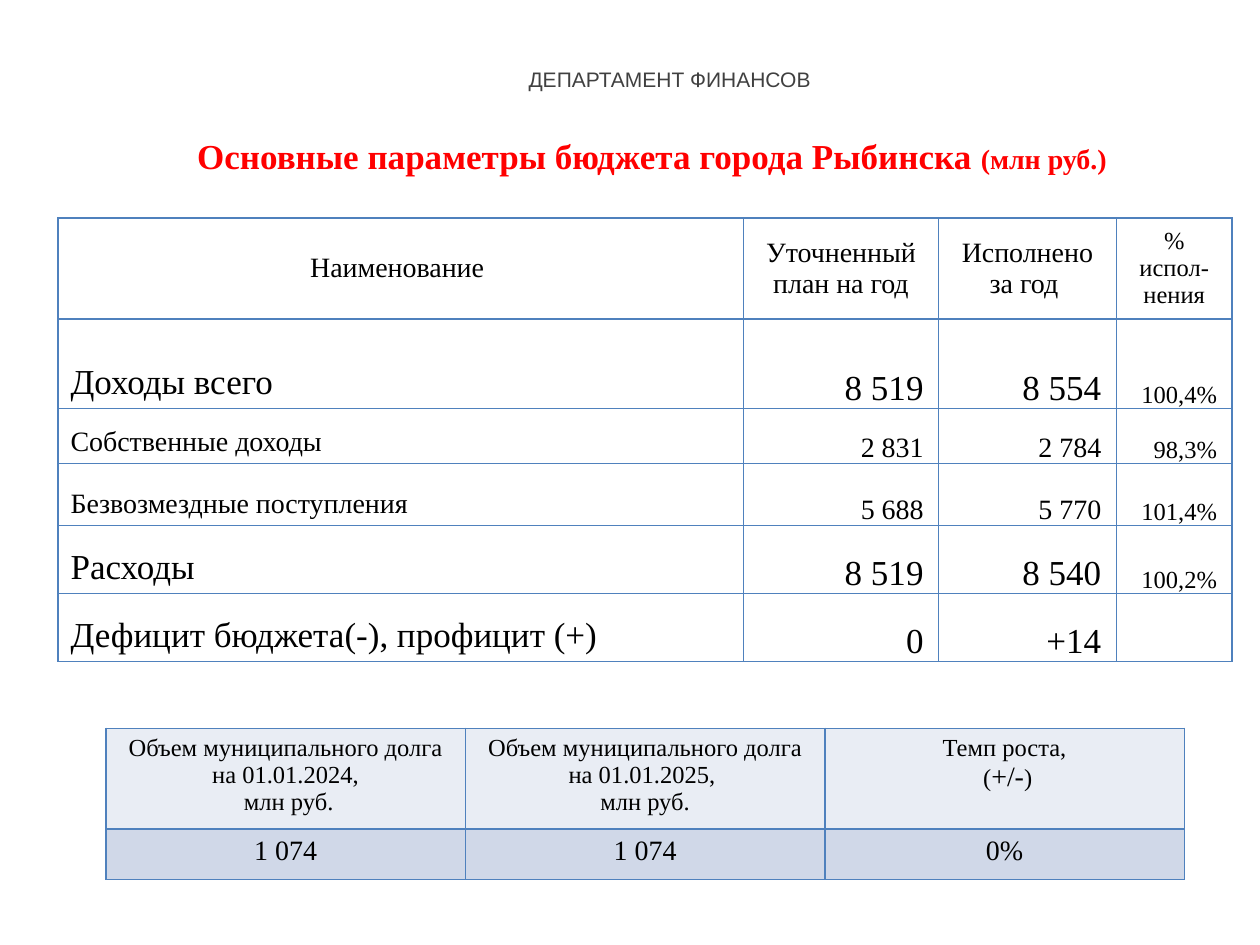
import pptx
import pptx.dml.color
import pptx.enum.text
import pptx.oxml
import pptx.oxml.ns
import pptx.util

Inches = pptx.util.Inches
Align = pptx.enum.text.PP_ALIGN
Anchor = pptx.enum.text.MSO_ANCHOR

SERIF = "Times New Roman"
BORDER_COLOR = "4F81BD"
NUMBER_MARGINS = {
    "margin_left": Inches(0.01),
    "margin_top": Inches(0.01),
    "margin_right": Inches(0.12),
    "margin_bottom": Inches(0),
}

BUDGET_HEADER = [
    ("Наименование ", 16),
    ("Уточненный план на год", 16),
    ("Исполнено\nза год ", 16),
    ("% испол- нения", 14),
]
# Name, plan, actual, percentage, text size, row height
BUDGET_ROWS = [
    ("Доходы всего", "8 519", "8 554", "100,4%", 20, 0.71),
    ("Собственные доходы", "2 831", "2 784", "98,3%", 16, 0.44),
    ("Безвозмездные поступления", "5 688", "5 770", "101,4%", 16, 0.49),
    ("Расходы", "8 519", "8 540", "100,2%", 20, 0.54),
    ("Дефицит бюджета(-), профицит (+)", "0", "+14", "", 20, 0.54),
]
DEBT_HEADER = [
    [[("Объем муниципального долга на 01.01.2024,", 14)], [(" млн руб.", 14)]],
    [[("Объем муниципального долга на 01.01.2025, ", 14)], [("млн руб.", 14)]],
    [[("Темп роста,", 14)], [(" (", 14), ("+/-", 16), (")", 14)]],
]
DEBT_VALUES = ["1 074", "1 074", "0%"]


def rgb(color):
    return pptx.dml.color.RGBColor.from_string(color)


def write_paragraphs(frame, paragraphs, alignment, name=SERIF, color="000000", bold=False):
    """Fill a text frame; each paragraph is a list of (text, size) runs."""
    for index, runs in enumerate(paragraphs):
        paragraph = frame.add_paragraph() if index else frame.paragraphs[0]
        paragraph.alignment = alignment
        for text, size in runs:
            run = paragraph.add_run()
            run.text = text
            font_format = {"name": name, "size": pptx.util.Pt(size), "bold": bold}
            for attribute, value in font_format.items():
                setattr(run.font, attribute, value)
            run.font.color.rgb = rgb(color)


def add_text(slide, box, runs, **font_format):
    frame = slide.shapes.add_textbox(*map(Inches, box)).text_frame
    frame.word_wrap = True
    frame.vertical_anchor = Anchor.MIDDLE
    write_paragraphs(frame, [runs], Align.CENTER, **font_format)


def add_borders(cell):
    properties = cell._tc.get_or_add_tcPr()
    for side in ("lnL", "lnR", "lnT", "lnB"):
        properties.append(pptx.oxml.parse_xml(
            f'<a:{side} {pptx.oxml.ns.nsdecls("a")} w="12700"><a:solidFill>'
            f'<a:srgbClr val="{BORDER_COLOR}"/></a:solidFill></a:{side}>'))


def fill_cell(cell, paragraphs, alignment, anchor, fill=None, margins=None):
    for attribute, value in (margins or {}).items():
        setattr(cell, attribute, value)
    cell.vertical_anchor = anchor
    add_borders(cell)
    if fill:
        cell.fill.solid()
        cell.fill.fore_color.rgb = rgb(fill)
    else:
        cell.fill.background()
    write_paragraphs(cell.text_frame, paragraphs, alignment)


def add_grid(slide, left, top, widths, heights):
    """Add an empty table with the given column widths and row heights."""
    table = slide.shapes.add_table(
        len(heights), len(widths), Inches(left), Inches(top),
        Inches(sum(widths)), Inches(sum(heights))).table
    for column, width in zip(table.columns, widths):
        column.width = Inches(width)
    for row, height in zip(table.rows, heights):
        row.height = Inches(height)
    return table


def add_budget_table(slide, left, top, widths):
    heights = [0.74] + [row[-1] for row in BUDGET_ROWS]
    table = add_grid(slide, left, top, widths, heights)
    for column, (text, size) in enumerate(BUDGET_HEADER):
        paragraphs = [[(line, size)] for line in text.split("\n")]
        fill_cell(table.cell(0, column), paragraphs, Align.CENTER, Anchor.MIDDLE)
    for row, (name, plan, actual, percentage, size, _) in enumerate(BUDGET_ROWS, 1):
        fill_cell(table.cell(row, 0), [[(name, size)]], Align.LEFT, Anchor.BOTTOM)
        numbers = [(plan, size), (actual, size), (percentage, 14)]
        for column, number in enumerate(numbers, 1):
            paragraphs = [[number]] if number[0] else []
            fill_cell(table.cell(row, column), paragraphs, Align.RIGHT,
                      Anchor.BOTTOM, margins=NUMBER_MARGINS)


def add_debt_table(slide, left, top, width):
    widths = [width / len(DEBT_VALUES)] * len(DEBT_VALUES)
    table = add_grid(slide, left, top, widths, [0.75, 0.4])
    for column, (header, value) in enumerate(zip(DEBT_HEADER, DEBT_VALUES)):
        fill_cell(table.cell(0, column), header, Align.CENTER, Anchor.TOP, "E9EDF4")
        fill_cell(table.cell(1, column), [[(value, 16)]], Align.CENTER, Anchor.TOP, "D0D8E8")


def main():
    presentation = pptx.Presentation()
    presentation.slide_width = Inches(10)
    presentation.slide_height = Inches(7.5)
    slide = presentation.slides.add_slide(presentation.slide_layouts[6])
    add_text(slide, (3.27, 0.39, 4.09, 0.47), [("ДЕПАРТАМЕНТ ФИНАНСОВ", 12)],
             name="Arial", color="404040")
    add_text(slide, (0.53, 1, 9.29, 0.47),
             [("Основные параметры бюджета города Рыбинска ", 20), ("(млн руб.)", 16)],
             color="FF0000", bold=True)
    add_budget_table(slide, 0.46, 1.73, [5.44, 1.55, 1.41, 0.92])
    add_debt_table(slide, 0.84, 5.78, 8.56)
    presentation.save("out.pptx")


if __name__ == "__main__":
    main()
